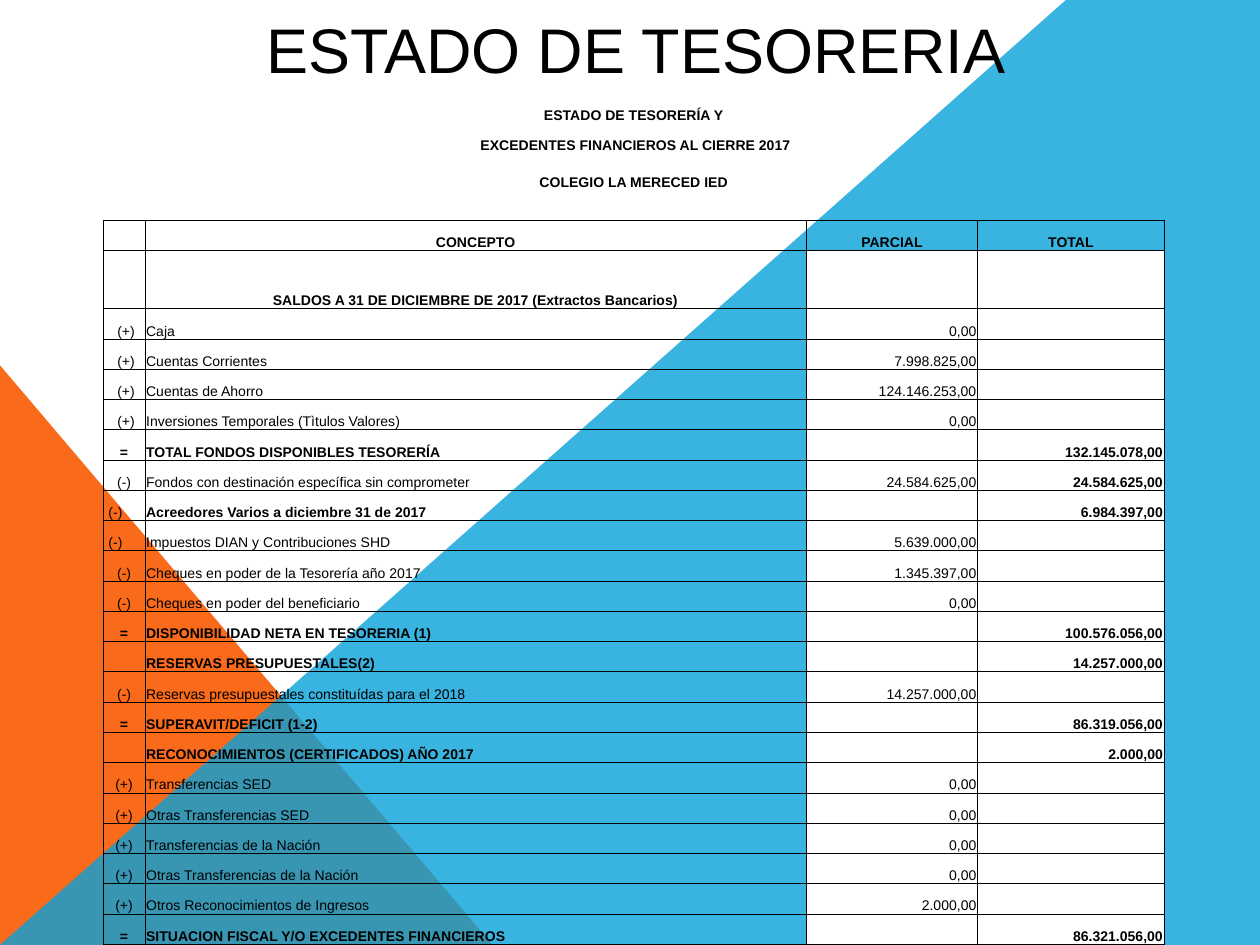
"""Build the treasury statement slide."""
from dataclasses import dataclass

from lxml import etree
from pptx import Presentation
from pptx.dml.color import RGBColor
from pptx.enum.shapes import MSO_SHAPE
from pptx.enum.text import MSO_ANCHOR, PP_ALIGN
from pptx.oxml.ns import qn
from pptx.slide import Slide
from pptx.table import Table, _Cell
from pptx.util import Inches, Pt

LEFT, CENTER, RIGHT = PP_ALIGN.LEFT, PP_ALIGN.CENTER, PP_ALIGN.RIGHT
MIDDLE, BOTTOM = MSO_ANCHOR.MIDDLE, MSO_ANCHOR.BOTTOM
RIGHT_TRIANGLE = MSO_SHAPE.RIGHT_TRIANGLE


@dataclass(frozen=True)
class Theme:
    """Colours, font and type sizes."""

    font: str = "Arial"
    title: int = 36
    body: int = 8
    border: float = 0.5
    ink: str = "000000"
    paper: str = "FFFFFF"
    orange: str = "F96A1B"
    blue: str = "08A1D9"
    blue_opacity: int = 80


@dataclass(frozen=True)
class Entry:
    """One line of the statement."""

    sign: str
    concept: str
    partial: str = ""
    total: str = ""
    sign_align: PP_ALIGN = CENTER
    concept_align: PP_ALIGN = LEFT


THEME = Theme()
HEADINGS = [
    "ESTADO DE TESORERÍA Y",
    " EXCEDENTES FINANCIEROS AL CIERRE 2017",
    "COLEGIO LA MERECED IED",
    "",
]
COLUMNS = ["", "CONCEPTO", "PARCIAL", "TOTAL"]
ENTRIES = [
    Entry("", "SALDOS A 31 DE DICIEMBRE DE 2017 (Extractos Bancarios)", concept_align=CENTER),
    Entry(" (+)", "Caja", "0,00"),
    Entry(" (+)", "Cuentas Corrientes", "7.998.825,00"),
    Entry(" (+)", "Cuentas de Ahorro", "124.146.253,00"),
    Entry(" (+)", "Inversiones Temporales (Tìtulos Valores)", "0,00"),
    Entry("=", "TOTAL FONDOS DISPONIBLES TESORERÍA", total="132.145.078,00"),
    Entry("(-)", "Fondos con destinación específica sin comprometer", "24.584.625,00", "24.584.625,00"),
    Entry(" (-)", "Acreedores Varios a diciembre 31 de 2017", total="6.984.397,00", sign_align=LEFT),
    Entry(" (-)", "Impuestos DIAN y Contribuciones SHD", "5.639.000,00", sign_align=LEFT),
    Entry("(-)", "Cheques en poder de la Tesorería año 2017", "1.345.397,00"),
    Entry("(-)", "Cheques en poder del beneficiario", "0,00"),
    Entry("=", "DISPONIBILIDAD NETA EN TESORERIA (1)", total="100.576.056,00"),
    Entry("", "RESERVAS PRESUPUESTALES(2)", total="14.257.000,00"),
    Entry("(-)", "Reservas presupuestales constituídas para el 2018", "14.257.000,00"),
    Entry("=", "SUPERAVIT/DEFICIT (1-2)", total="86.319.056,00"),
    Entry("", "RECONOCIMIENTOS (CERTIFICADOS) AÑO 2017", total="2.000,00"),
    Entry("(+)", "Transferencias SED", "0,00"),
    Entry("(+)", "Otras Transferencias SED", "0,00"),
    Entry("(+)", "Transferencias de la Nación", "0,00"),
    Entry("(+)", "Otras Transferencias de la Nación", "0,00"),
    Entry("(+)", "Otros Reconocimientos de Ingresos", "2.000,00"),
    Entry("=", "SITUACION FISCAL Y/O EXCEDENTES FINANCIEROS", total="86.321.056,00"),
]
COLUMN_WIDTHS = [0.33, 5.25, 1.36, 1.48]
TABLE_HEIGHT = 6.76
TALL_ROWS = {2: 0.29, 5: 0.46}


def paint(sp, color: str) -> None:
    """Give a shape a flat fill without line or shadow."""
    sp.shadow.inherit = False
    sp.fill.solid()
    sp.fill.fore_color.rgb = RGBColor.from_string(color)
    sp.line.fill.background()


def add_background(s: Slide) -> None:
    """Draw the orange triangle and the translucent blue panel."""
    triangle = s.shapes.add_shape(RIGHT_TRIANGLE, 0, Inches(2.9), Inches(3.91), Inches(4.6))
    paint(triangle, THEME.orange)
    builder = s.shapes.build_freeform(0, Inches(7.5))
    corners = [(8.46, 0), (10, 0), (10, 7.5)]
    builder.add_line_segments([(Inches(x), Inches(y)) for x, y in corners])
    panel = builder.convert_to_shape()
    paint(panel, THEME.blue)
    color = panel.fill._xPr.find(".//" + qn("a:srgbClr"))
    etree.SubElement(color, qn("a:alpha"), val=str(THEME.blue_opacity * 1000))


def add_text(p, text: str, size: int, align: PP_ALIGN, bold: bool = False) -> None:
    """Write one run, or size the paragraph when it is empty."""
    p.alignment = align
    if not text:
        etree.SubElement(p._p, qn("a:endParaRPr"), sz=str(size * 100))
        return
    r = p.add_run()
    r.text = text
    r.font.name, r.font.size, r.font.bold = THEME.font, Pt(size), bold
    r.font.color.rgb = RGBColor.from_string(THEME.ink)


def set_borders(cell: _Cell, sides: str) -> None:
    """Rule the named sides of a cell and clear the others."""
    tc_pr = cell._tc.get_or_add_tcPr()
    for i, side in enumerate("LRTB"):
        ln = etree.Element(qn(f"a:ln{side}"), w=str(Pt(THEME.border)))
        if side in sides:
            fill = etree.SubElement(ln, qn("a:solidFill"))
            etree.SubElement(fill, qn("a:srgbClr"), val=THEME.ink)
        else:
            etree.SubElement(ln, qn("a:noFill"))
        tc_pr.insert(i, ln)


def fill_cell(cell: _Cell, text: str, align: PP_ALIGN, bold: bool = False,
              white: bool = False, sides: str = "LRTB") -> None:
    """Format one table cell and write its text."""
    cell.margin_left = cell.margin_right = cell.margin_top = Inches(0.01)
    cell.margin_bottom = 0
    cell.vertical_anchor = BOTTOM
    if white:
        cell.fill.solid()
        cell.fill.fore_color.rgb = RGBColor.from_string(THEME.paper)
    else:
        cell.fill.background()
    set_borders(cell, sides)
    add_text(cell.text_frame.paragraphs[0], text, THEME.body, align, bold)


def fill_headings(table: Table) -> None:
    """Write the merged heading rows and the column names."""
    last = len(HEADINGS) - 1
    for row, heading in enumerate(HEADINGS):
        table.cell(row, 0).merge(table.cell(row, len(COLUMNS) - 1))
        for col in range(len(COLUMNS)):
            fill_cell(table.cell(row, col), "" if col else heading, CENTER, True,
                      sides="B" if row == last else "")
    for col, name in enumerate(COLUMNS):
        fill_cell(table.cell(len(HEADINGS), col), name, CENTER, True)


def fill_entry(table: Table, row: int, entry: Entry) -> None:
    """Write one statement line."""
    fill_cell(table.cell(row, 0), entry.sign, entry.sign_align, entry.sign == "=")
    fill_cell(table.cell(row, 1), entry.concept, entry.concept_align, not entry.partial)
    fill_cell(table.cell(row, 2), entry.partial, RIGHT, white=True)
    fill_cell(table.cell(row, 3), entry.total, RIGHT, True, white=True)


def add_statement(s: Slide) -> None:
    """Add the treasury table."""
    first = len(HEADINGS) + 1
    count = first + len(ENTRIES)
    table = s.shapes.add_table(count, len(COLUMNS), Inches(0.82), Inches(0.74),
                               Inches(sum(COLUMN_WIDTHS)), Inches(TABLE_HEIGHT)).table
    table.first_row = table.horz_banding = False
    for column, width in zip(table.columns, COLUMN_WIDTHS):
        column.width = Inches(width)
    regular = (TABLE_HEIGHT - sum(TALL_ROWS.values())) / (count - len(TALL_ROWS))
    for i, row in enumerate(table.rows):
        row.height = Inches(TALL_ROWS.get(i, regular))
    fill_headings(table)
    for row, entry in enumerate(ENTRIES, first):
        fill_entry(table, row, entry)


def add_title(s: Slide) -> None:
    """Place the slide title above the background."""
    title = s.shapes.title
    s.shapes._spTree.append(title._element)
    title.left, title.top = Inches(0.05), Inches(0.03)
    title.width, title.height = Inches(10), Inches(0.71)
    tf = title.text_frame
    tf.word_wrap = True
    tf.vertical_anchor = MIDDLE
    add_text(tf.paragraphs[0], "ESTADO DE TESORERIA", THEME.title, CENTER)


def main() -> None:
    """Build and save the presentation."""
    prs = Presentation()
    prs.slide_width, prs.slide_height = Inches(10), Inches(7.5)
    s = prs.slides.add_slide(prs.slide_layouts[5])
    add_background(s)
    add_title(s)
    add_statement(s)
    prs.save("out.pptx")


if __name__ == "__main__":
    main()
